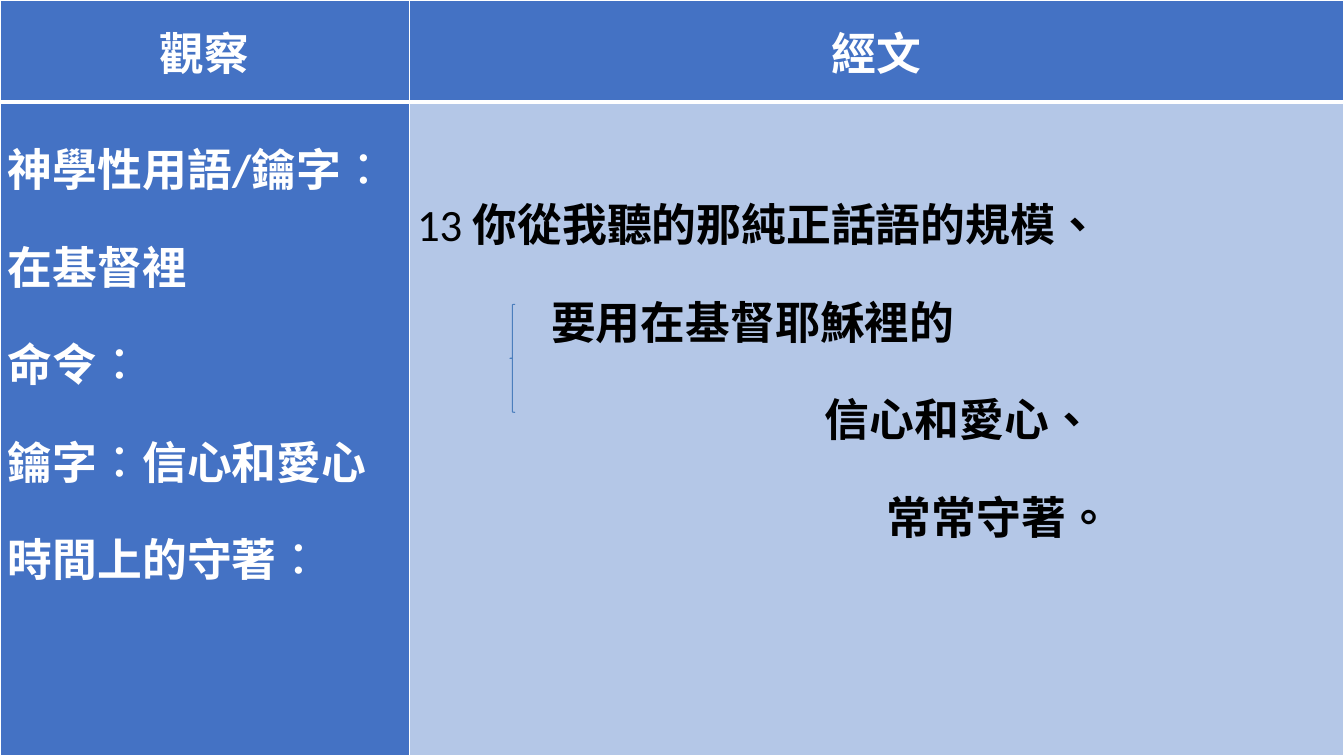
from pptx import Presentation, util as u
from pptx.dml.color import RGBColor
from pptx.enum import lang, shapes, text
from pptx.oxml import parse_xml
from pptx.oxml.ns import nsdecls

Cm = u.Cm
BLUE, PALE, WHITE, BLACK = "4472C4", "B4C7E7", "FFFFFF", "000000"
WIDE, HIGH = 33.87, 19.05
COLS = [10.31, 23.56]
ROWS = [2.57, 16.48]
HEADS = ["觀察", "經文"]
NOTES = ["神學性用語/鑰字︰", "在基督裡", "命令︰", "鑰字︰信心和愛心", "時間上的守著︰"]
VERSE = [
    (0, "你從我聽的那純正話語的規模、"),
    (3.38, "要用在基督耶穌裡的"),
    (10.28, "信心和愛心、"),
    (11.84, "常常守著。"),
]


def put(obj, vals):
    """Set each attribute of obj from a dict."""
    for key, val in vals.items():
        setattr(obj, key, val)


def tint(fmt, hue):
    """Give a fill or font colour format a solid hex colour."""
    fmt.rgb = RGBColor.from_string(hue)


def add_run(para, words, hue, bold=True):
    """Add a run in the slide's type style."""
    run = para.add_run()
    run.text = words
    put(run.font, {"name": "Calibri", "size": u.Pt(32), "bold": bold,
                   "language_id": lang.MSO_LANGUAGE_ID.TRADITIONAL_CHINESE})
    tint(run.font.color, hue)


def add_line(frame, first, indent=0):
    """Return a body paragraph with wide line spacing and a left indent."""
    para = frame.paragraphs[0] if first else frame.add_paragraph()
    para.line_spacing = 1.5
    para._p.get_or_add_pPr().set("marL", str(Cm(indent)))
    return para


def edge(cell, widths):
    """Draw white cell borders with widths in points by side."""
    props = cell._tc.get_or_add_tcPr()
    for spot, (side, width) in enumerate(widths.items()):
        props.insert(spot, parse_xml(
            f'<a:ln{side} {nsdecls("a")} w="{u.Pt(width)}"><a:solidFill>'
            f'<a:srgbClr val="{WHITE}"/></a:solidFill></a:ln{side}>'))


def dress(cell, hue, widths, top=0):
    """Set a cell's margins, fill and borders."""
    put(cell, {"margin_left": Cm(0.2), "margin_right": Cm(0.2),
               "margin_top": Cm(top), "margin_bottom": 0})
    cell.fill.solid()
    tint(cell.fill.fore_color, hue)
    edge(cell, widths)


def add_grid(slide):
    """Add the table of observations and scripture."""
    grid = slide.shapes.add_table(2, 2, 0, 0, Cm(WIDE), Cm(HIGH)).table
    for col, width in zip(grid.columns, COLS):
        col.width = Cm(width)
    for row, height in zip(grid.rows, ROWS):
        row.height = Cm(height)
    for pos, head in enumerate(HEADS):
        cell = grid.cell(0, pos)
        dress(cell, BLUE, {"L": 1, "R": 1, "T": 1, "B": 3})
        cell.vertical_anchor = text.MSO_ANCHOR.MIDDLE
        para = cell.text_frame.paragraphs[0]
        para.alignment = text.PP_ALIGN.CENTER
        add_run(para, head, WHITE)
    return grid


def fill_notes(cell):
    """Write the observations."""
    dress(cell, BLUE, {"L": 1, "R": 1, "T": 3, "B": 1})
    for pos, note in enumerate(NOTES):
        add_run(add_line(cell.text_frame, pos == 0), note, WHITE)


def fill_verse(cell):
    """Write the numbered verse in stepped lines."""
    dress(cell, PALE, {"L": 1, "R": 1, "T": 3, "B": 1}, top=1.39)
    for pos, (indent, words) in enumerate(VERSE):
        para = add_line(cell.text_frame, pos == 0, indent)
        if pos == 0:
            add_run(para, "13 ", BLACK, False)
        add_run(para, words, BLACK)


def add_brace(slide):
    """Add the thin brace beside the verse."""
    brace = slide.shapes.add_shape(shapes.MSO_SHAPE.LEFT_BRACE,
                                   Cm(12.85), Cm(7.67), Cm(0.13), Cm(2.72))
    brace.shadow.inherit = False
    brace.fill.background()
    tint(brace.line.color, "4B7EBC")
    brace.line.width = u.Pt(0.75)


def main():
    """Build and save the slide."""
    deck = Presentation()
    put(deck, {"slide_width": Cm(WIDE), "slide_height": Cm(HIGH)})
    slide = deck.slides.add_slide(deck.slide_layouts[6])
    grid = add_grid(slide)
    fill_notes(grid.cell(1, 0))
    fill_verse(grid.cell(1, 1))
    add_brace(slide)
    deck.save("out.pptx")


if __name__ == "__main__":
    main()
